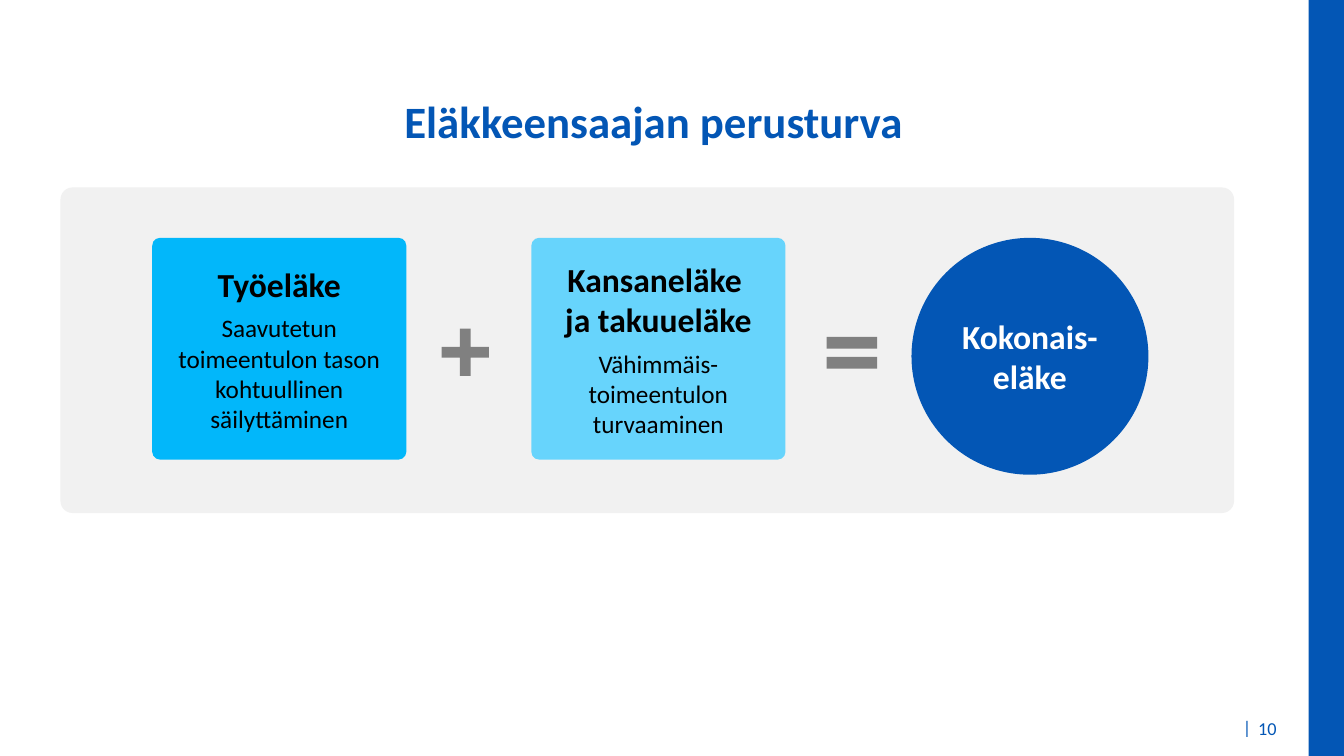
from pptx import Presentation
from pptx.dml.color import RGBColor
from pptx.enum import shapes, text
from pptx.util import Inches, Pt

BLUE, BLACK, WHITE, GREY = "0356B5", "000000", "FFFFFF", "808080"
KIND = shapes.MSO_SHAPE


def paint(color_format, color):
    color_format.rgb = RGBColor.from_string(color)


def add_block(page, kind, box, color, adjustments=()):
    """Add a filled preset shape without line or shadow; box is in inches."""
    block = page.shapes.add_shape(kind, *map(Inches, box))
    block.shadow.inherit = False
    block.fill.solid()
    paint(block.fill.fore_color, color)
    block.line.fill.background()
    for index, value in enumerate(adjustments):
        block.adjustments[index] = value
    return block


def write(frame, lines, color, align=text.PP_ALIGN.CENTER):
    """Fill a frame with (wording, size, bold, space after) lines."""
    for index, (wording, size, bold, after) in enumerate(lines):
        para = frame.add_paragraph() if index else frame.paragraphs[0]
        para.text = wording
        para.alignment = align
        para.space_after = Pt(after)
        for span in para.runs:
            span.font.name = "Calibri"
            span.font.size = Pt(size)
            span.font.bold = bold
            paint(span.font.color, color)


def add_title(page, box, wording):
    title = page.shapes.title
    title.left, title.top, title.width, title.height = map(Inches, box)
    frame = title.text_frame
    frame.vertical_anchor = text.MSO_ANCHOR.TOP
    frame.auto_size = text.MSO_AUTO_SIZE.NONE
    write(frame, [(wording, 32, True, 0)], BLUE)


def add_pension_card(page, box, color, heading, purpose):
    card = add_block(page, KIND.ROUNDED_RECTANGLE, box, color, [0.035])
    card.text_frame.vertical_anchor = text.MSO_ANCHOR.MIDDLE
    write(card.text_frame, [(heading, 24, True, 6), (purpose, 18, False, 0)], BLACK)


def add_total(page, box):
    total = add_block(page, KIND.OVAL, box, BLUE)
    total.text_frame.vertical_anchor = text.MSO_ANCHOR.MIDDLE
    write(total.text_frame, [("Kokonais-", 24, True, 0), ("eläke", 24, True, 0)], WHITE)


def add_pension_sum(page, box):
    left, top, width, height = box
    add_block(page, KIND.ROUNDED_RECTANGLE, box, "F1F1F1", [0.037])
    row = top + 0.5
    add_pension_card(page, (left + 0.91, row, 2.52, 2.2), "02B7FA", "Työeläke",
                     "Saavutetun toimeentulon tason kohtuullinen säilyttäminen")
    add_block(page, KIND.CROSS, (left + 3.78, row + 0.9, 0.47, 0.47), GREY, [0.388])
    add_pension_card(page, (left + 4.67, row, 2.52, 2.2), "67D4FC",
                     "Kansaneläke \vja takuueläke",
                     "Vähimmäis-toimeentulon turvaaminen")
    add_total(page, (left + 8.44, row, 2.35, 2.35))
    add_block(page, KIND.MATH_EQUAL, (left + 7.51, row + 0.8, 0.68, 0.68), GREY,
              [0.172, 0.118])


def add_page_mark(page, box, number):
    """Add the divider and the page number at the foot of the slide."""
    left, top, width, height = box
    for wording, offset, drop, anchor in (
            ("|", 0, 0.01, text.MSO_ANCHOR.TOP),
            (number, 0.15, 0, text.MSO_ANCHOR.MIDDLE)):
        mark = page.shapes.add_textbox(
            *map(Inches, (left + offset, top + drop, width - 0.15, height)))
        mark.text_frame.vertical_anchor = anchor
        mark.text_frame.word_wrap = True
        write(mark.text_frame, [(wording, 13, False, 0)], BLUE, text.PP_ALIGN.LEFT)


def main():
    deck = Presentation()
    deck.slide_width, deck.slide_height = Inches(13.33), Inches(7.5)
    page = deck.slides.add_slide(deck.slide_layouts[5])
    add_block(page, KIND.RECTANGLE, (12.98, 0, 0.35, 7.5), BLUE)
    add_page_mark(page, (12.23, 7.05, 0.59, 0.35), "10")
    add_title(page, (0, 0.88, 12.97, 0.92), "Eläkkeensaajan perusturva")
    add_pension_sum(page, (0.6, 1.86, 11.64, 3.23))
    deck.save("out.pptx")


if __name__ == "__main__":
    main()
